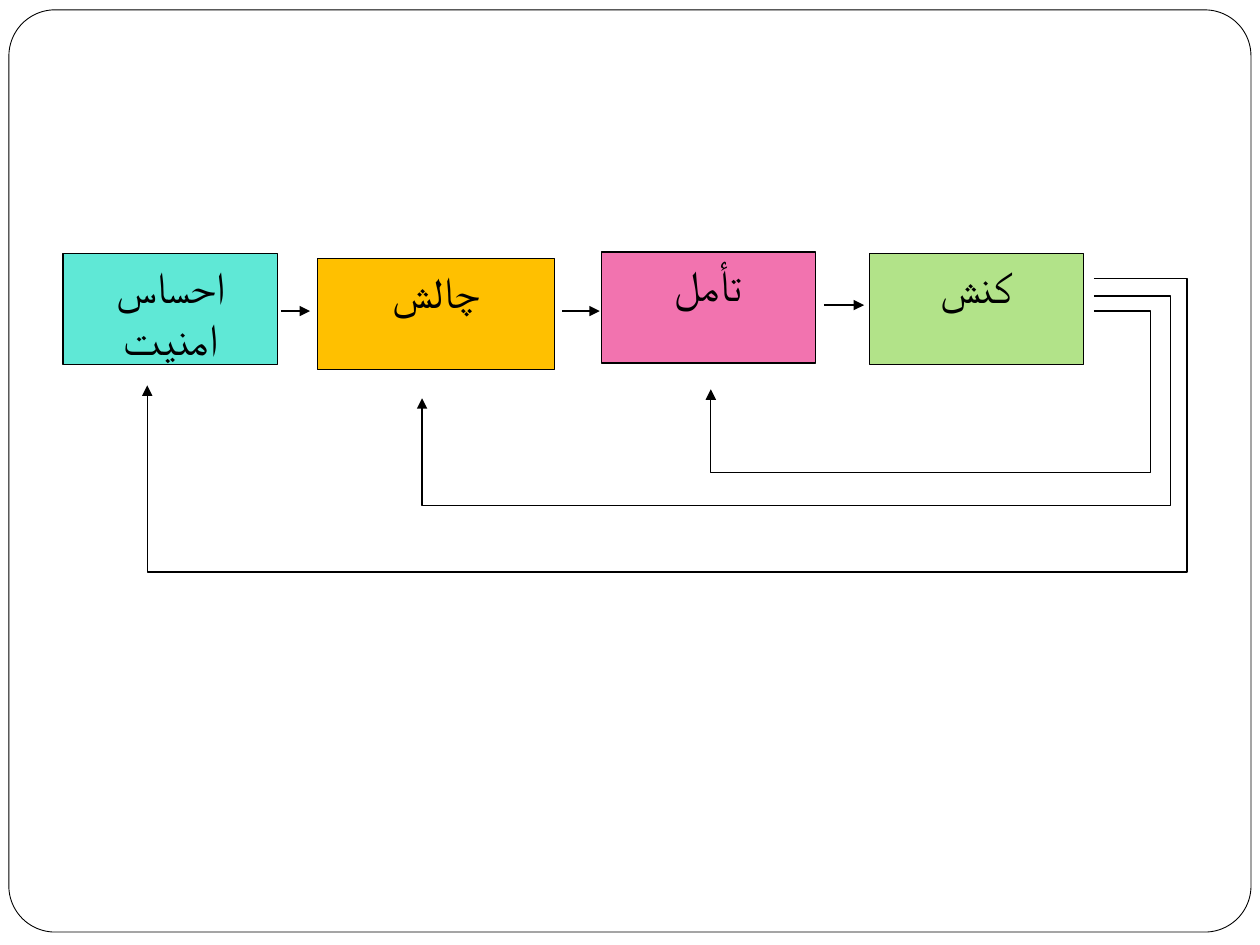
import pptx
import pptx.dml.color
import pptx.enum.shapes
import pptx.enum.text
import pptx.oxml.ns
import pptx.util
from lxml import etree

Cm = pptx.util.Cm
Pt = pptx.util.Pt
RGBColor = pptx.dml.color.RGBColor
MSO_SHAPE = pptx.enum.shapes.MSO_SHAPE
qn = pptx.oxml.ns.qn

BLACK = RGBColor(0x00, 0x00, 0x00)
WHITE = RGBColor(0xFF, 0xFF, 0xFF)
TURQUOISE = RGBColor(0x5F, 0xE8, 0xD6)
AMBER = RGBColor(0xFF, 0xC0, 0x00)
PINK = RGBColor(0xF2, 0x73, 0xAF)
GREEN = RGBColor(0xB2, 0xE3, 0x89)

STAGE_HEIGHT = 2.24
FEEDBACK_START = 20.78

STAGES = [
    ("احساس امنیت", 0, 0.03, 4.32, TURQUOISE, 10),
    ("چالش", 5.13, 0.13, 4.78, AMBER, 10),
    ("تأمل", 10.85, 0, 4.32, PINK, 0),
    ("کنش", 16.26, 0.03, 4.32, GREEN, 10),
]
STEPS = [(4.39, 4.98, 1.19), (10.06, 10.82, 1.19), (15.34, 16.15, 1.07)]
FEEDBACK_LOOPS = [
    (1.19, 21.92, 4.45, 13.06, 2.77),
    (0.89, 22.33, 5.11, 7.24, 2.95),
    (0.53, 22.66, 6.45, 1.70, 2.69),
]


def set_line(shape, width=0.75, arrow=False):
    shape.line.color.rgb = BLACK
    shape.line.width = Pt(width)
    if arrow:
        outline = shape.line._get_or_add_ln()
        etree.SubElement(outline, qn("a:tailEnd"), type="triangle")


def add_box(slide, kind, left, top, width, height, fill, line_width=0.75):
    shape = slide.shapes.add_shape(kind, Cm(left), Cm(top), Cm(width), Cm(height))
    shape.shadow.inherit = False
    shape.fill.solid()
    shape.fill.fore_color.rgb = fill
    set_line(shape, line_width)
    return shape


def write_text(shape, text, size=25, font="Calibri", color=BLACK, space_after=0):
    frame = shape.text_frame
    frame.word_wrap = True
    frame.vertical_anchor = pptx.enum.text.MSO_ANCHOR.TOP
    paragraph = frame.paragraphs[0]
    paragraph.alignment = pptx.enum.text.PP_ALIGN.CENTER
    paragraph.space_after = Pt(space_after)
    paragraph._p.get_or_add_pPr().set("rtl", "1")
    run = paragraph.add_run()
    run.text = text
    run.font.size = Pt(size)
    run.font.name = font
    run.font.color.rgb = color
    etree.SubElement(run._r.get_or_add_rPr(), qn("a:cs"), typeface=font)


def add_step_arrow(slide, start, end, y):
    connector = slide.shapes.add_connector(
        pptx.enum.shapes.MSO_CONNECTOR.STRAIGHT, Cm(start), Cm(y), Cm(end), Cm(y)
    )
    set_line(connector, arrow=True)
    etree.SubElement(connector._element.spPr, qn("a:effectLst"))


def add_feedback_arrow(slide, points):
    start, *rest = [(Cm(x), Cm(y)) for x, y in points]
    builder = slide.shapes.build_freeform(*start)
    builder.add_line_segments(rest, close=False)
    shape = builder.convert_to_shape()
    shape.shadow.inherit = False
    shape.fill.background()
    set_line(shape, arrow=True)


def add_frame(slide, left, top, width, height):
    frame = add_box(
        slide, MSO_SHAPE.ROUNDED_RECTANGLE, left, top, width, height, WHITE, 0.5
    )
    frame.adjustments[0] = 0.05


def add_cycle(slide, left, top):
    for text, x, y, width, fill, space_after in STAGES:
        stage = add_box(
            slide, MSO_SHAPE.RECTANGLE, left + x, top + y, width, STAGE_HEIGHT, fill
        )
        write_text(stage, text, space_after=space_after)
    for start, end, y in STEPS:
        add_step_arrow(slide, left + start, left + end, top + y)
    for start_y, right, bottom, target_x, target_y in FEEDBACK_LOOPS:
        corners = [
            (FEEDBACK_START, start_y),
            (right, start_y),
            (right, bottom),
            (target_x, bottom),
            (target_x, target_y),
        ]
        add_feedback_arrow(slide, [(left + x, top + y) for x, y in corners])


def main():
    presentation = pptx.Presentation()
    presentation.slide_width = Cm(25.4)
    presentation.slide_height = Cm(19.05)
    slide = presentation.slides.add_slide(presentation.slide_layouts[6])
    add_frame(slide, 0.18, 0.2, 25.04, 18.59)
    add_cycle(slide, 1.27, 5.08)
    presentation.save("out.pptx")


if __name__ == "__main__":
    main()
